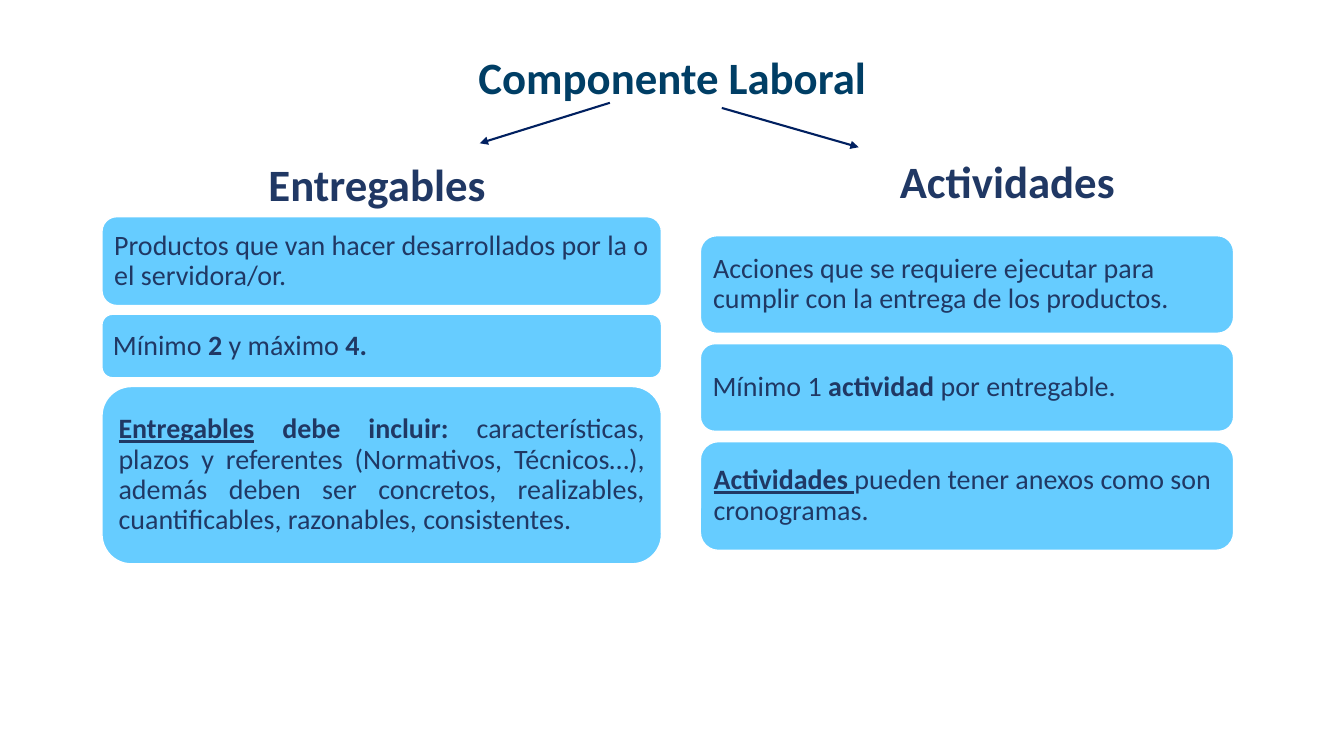
from lxml.etree import SubElement
from pptx import Presentation
from pptx.dml.color import RGBColor
from pptx.enum.shapes import MSO_CONNECTOR, MSO_SHAPE
from pptx.enum.text import MSO_ANCHOR as Anchor, MSO_AUTO_SIZE, PP_ALIGN as Align
from pptx.oxml.ns import qn
from pptx.util import Cm, Pt


def color(hex_code):
    return RGBColor.from_string(hex_code)


class ComponentSlide:
    FONT = "Calibri"
    TITLE_COLOR, TEXT_COLOR = "003E65", "203864"
    CARD_COLOR, EDGE_COLOR, ARROW_COLOR = "66CCFF", "FFFFFF", "002060"
    HEADING_SIZE, CARD_SIZE = 32, 20
    CARD_INSET = 0.2

    def __init__(self, deck):
        self.slide = deck.slides.add_slide(deck.slide_layouts[5])

    def set_text(self, frame, runs, size, ink, anchor, align):
        """Fill a frame with one paragraph of (text, font format) runs."""
        frame_format = {"word_wrap": True, "auto_size": MSO_AUTO_SIZE.NONE,
                        "vertical_anchor": anchor}
        for key, value in frame_format.items():
            setattr(frame, key, value)
        paragraph = frame.paragraphs[0]
        paragraph.alignment = align
        paragraph.line_spacing = 0.9
        for text, extra in runs:
            run = paragraph.add_run()
            run.text = text
            run_format = {"name": self.FONT, "size": Pt(size), "bold": False} | extra
            for key, value in run_format.items():
                setattr(run.font, key, value)
            run.font.color.rgb = color(ink)

    def title(self, text, left, top, width, height):
        heading = self.slide.shapes.title
        place = {"left": left, "top": top, "width": width, "height": height}
        for key, value in place.items():
            setattr(heading, key, Cm(value))
        self.set_text(heading.text_frame, [(text, BOLD)], self.HEADING_SIZE,
                      self.TITLE_COLOR, Anchor.MIDDLE, Align.CENTER)

    def heading(self, text, left, top, width, height):
        box = self.slide.shapes.add_textbox(Cm(left), Cm(top), Cm(width), Cm(height))
        self.set_text(box.text_frame, [(text, BOLD)], self.HEADING_SIZE,
                      self.TEXT_COLOR, Anchor.BOTTOM, Align.CENTER)

    def card(self, runs, left, top, width, height, align):
        card = self.slide.shapes.add_shape(
            MSO_SHAPE.ROUNDED_RECTANGLE, Cm(left), Cm(top), Cm(width), Cm(height))
        card.shadow.inherit = False
        card.fill.solid()
        card.fill.fore_color.rgb = color(self.CARD_COLOR)
        card.line.color.rgb = color(self.EDGE_COLOR)
        card.line.width = Pt(1)
        for side in ("left", "top", "right", "bottom"):
            setattr(card.text_frame, f"margin_{side}", Cm(self.CARD_INSET))
        self.set_text(card.text_frame, runs, self.CARD_SIZE, self.TEXT_COLOR,
                      Anchor.MIDDLE, align)

    def card_stack(self, cards, left, top, width, gap):
        for height, align, runs in cards:
            self.card(runs, left, top, width, height, align)
            top += height + gap

    def arrow(self, *ends):
        arrow = self.slide.shapes.add_connector(
            MSO_CONNECTOR.STRAIGHT, *(Cm(end) for end in ends))
        arrow.line.color.rgb = color(self.ARROW_COLOR)
        arrow.line.width = Pt(1.5)
        properties = arrow._element.spPr
        SubElement(properties.find(qn("a:ln")), qn("a:tailEnd"), type="triangle")
        SubElement(properties, qn("a:effectLst"))


PLAIN, BOLD = {}, {"bold": True}
KEYWORD = {"bold": True, "underline": True}

DELIVERABLES = [
    (2.24, Align.LEFT, [
        ("Productos que van hacer desarrollados por la o el servidora/or.", PLAIN)]),
    (1.6, Align.LEFT, [
        ("Mínimo ", PLAIN), ("2 ", BOLD), ("y máximo ", PLAIN), ("4.", BOLD)]),
    (4.47, Align.JUSTIFY, [
        ("Entregables", KEYWORD), (" ", PLAIN), ("debe incluir: ", BOLD),
        ("características, plazos y referentes (Normativos, Técnicos…), además deben "
         "ser concretos, realizables, cuantificables, razonables, consistentes.", PLAIN)]),
]
ACTIVITIES = [
    (2.46, Align.LEFT, [
        ("Acciones que se requiere ejecutar para cumplir con la entrega de los "
         "productos.", PLAIN)]),
    (2.21, Align.LEFT, [
        ("Mínimo 1 ", PLAIN), ("actividad", BOLD), (" por entregable.", PLAIN)]),
    (2.74, Align.LEFT, [
        ("Actividades ", KEYWORD), ("pueden tener anexos como son cronogramas.", PLAIN)]),
]


def main():
    deck = Presentation()
    deck.slide_width, deck.slide_height = Cm(33.87), Cm(19.05)
    page = ComponentSlide(deck)

    # Title and its two branches
    page.title("Componente Laboral", 2.34, 1.02, 29.21, 2.01)
    page.arrow(15.37, 2.59, 12.09, 3.61)
    page.arrow(18.19, 2.72, 21.64, 3.71)

    # Deliverables column
    page.heading("Entregables", 2.34, 3.94, 14.33, 1.52)
    page.card_stack(DELIVERABLES, left=2.57, top=5.46, width=14.1, gap=0.22)

    # Activities column
    page.heading("Actividades", 18.19, 3.84, 14.4, 1.52)
    page.card_stack(ACTIVITIES, left=17.65, top=5.94, width=13.44, gap=0.26)

    deck.save("out.pptx")


if __name__ == "__main__":
    main()
